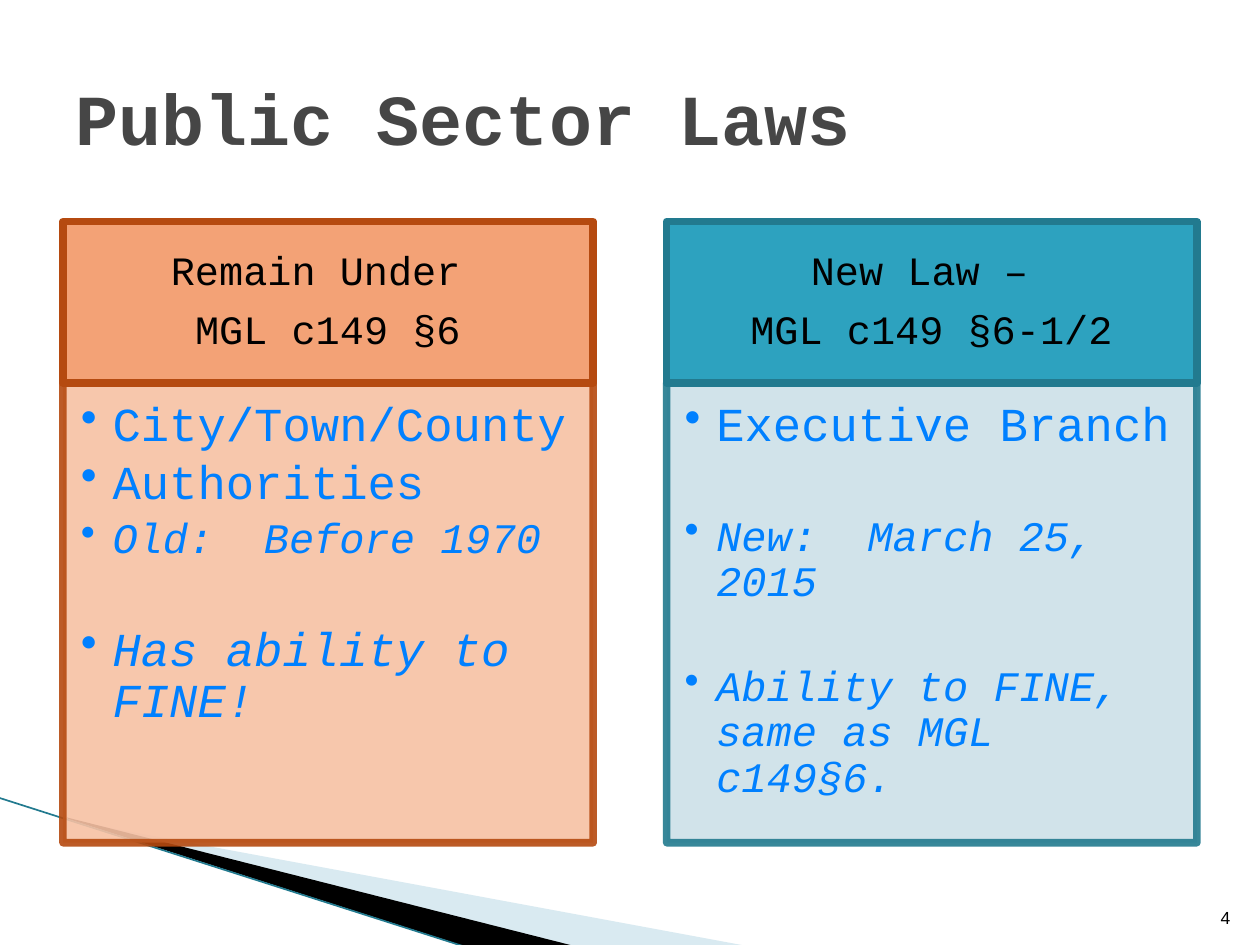
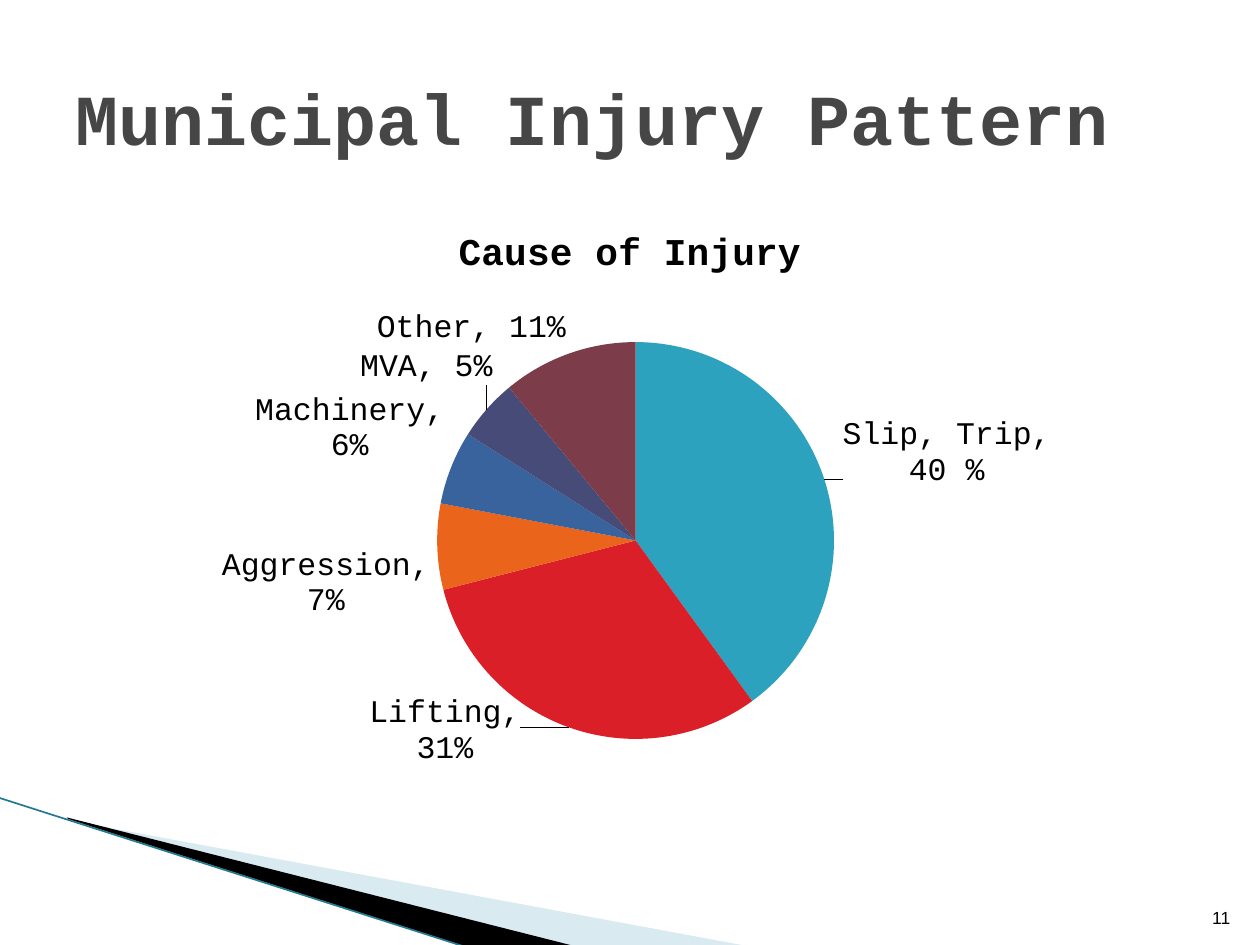
from lxml import etree
from pptx import Presentation
from pptx.chart.data import CategoryChartData
from pptx.dml.color import RGBColor
from pptx.enum.chart import XL_CHART_TYPE as ChartType
from pptx.enum.shapes import MSO_CONNECTOR as Connector, MSO_SHAPE as Shape
from pptx.enum.text import MSO_ANCHOR as Anchor, MSO_AUTO_SIZE as AutoSize, PP_ALIGN as Align
from pptx.oxml import parse_xml
from pptx.oxml.ns import nsdecls, qn
from pptx.util import Cm, Pt

FONT, NUMBER_FONT = "Courier New", "Arial"
BLACK = RGBColor(0x00, 0x00, 0x00)
TITLE_GREY = RGBColor(0x46, 0x46, 0x46)
BULLET_BLUE = RGBColor(0x00, 0x80, 0xFF)
PALE_BLUE = RGBColor(0xA0, 0xCB, 0xDC)
TEAL, TEAL_EDGE = RGBColor(0x2D, 0xA2, 0xBF), RGBColor(0x22, 0x7A, 0x8F)
TEAL_TINT = RGBColor(0xCD, 0xE0, 0xE8)
ORANGE, ORANGE_EDGE = RGBColor(0xF3, 0xA2, 0x76), RGBColor(0xB5, 0x4A, 0x10)
ORANGE_TINT = RGBColor(0xF7, 0xC1, 0xA4)
SLICE_COLOURS = [TEAL, RGBColor(0xDA, 0x1F, 0x28), RGBColor(0xEB, 0x64, 0x1B),
                 RGBColor(0x39, 0x63, 0x9D), RGBColor(0x47, 0x4B, 0x78),
                 RGBColor(0x7D, 0x3C, 0x4A)]

LAWS = [
    (1.27, ["Remain Under ", "MGL c149 §6"], ORANGE, ORANGE_TINT, ORANGE_EDGE,
     [("City/Town/County", 27, False, 0), ("Authorities", 27, False, 0),
      ("Old:  Before 1970", 24, True, 0), ("Has ability to FINE!", 27, True, 32)]),
    (13.44, ["New Law – ", "MGL c149 §6-1/2"], TEAL, TEAL_TINT, TEAL_EDGE,
     [("Executive Branch", 27, False, 0), ("New:  March 25, 2015", 24, True, 32),
      ("Ability to FINE, same as MGL c149§6.", 24, True, 30)]),
]
CAUSES = [("Slip, Trip", 40, 0.01, 0.02), ("Lifting", 31, -0.04, -0.06),
          ("Aggression", 7, 0, 0.06), ("Machinery", 6, 0, 0),
          ("MVA", 5, 0.01, -0.03), ("Other", 11, 0, 0)]


def style_font(font, size, colour=BLACK, name=FONT, bold=False, italic=False):
    """Apply one character format."""
    font.size, font.name, font.bold, font.italic = Pt(size), name, bold, italic
    font.color.rgb = colour


def write(paragraph, text, *, size, align=Align.LEFT, before=0, after=0,
          spacing=1.0, bullet=False, **style):
    """Fill a paragraph with formatted text."""
    if bullet:
        props = paragraph._p.get_or_add_pPr()
        props.set("marL", str(Cm(0.64)))
        props.set("indent", str(-Cm(0.64)))
        etree.SubElement(props, qn("a:buChar")).set("char", "•")
    paragraph.alignment, paragraph.line_spacing = align, spacing
    paragraph.space_before, paragraph.space_after = Pt(before), Pt(after)
    run = paragraph.add_run()
    run.text = text
    style_font(run.font, size, **style)


def paragraphs(frame, count):
    """Return the first paragraph and enough new ones to make the count."""
    return [frame.paragraphs[0]] + [frame.add_paragraph() for _ in range(count - 1)]


def set_alpha(fill_parent, percent):
    """Make the solid fill of an element partly transparent."""
    colour = fill_parent.find(qn("a:solidFill"))[0]
    etree.SubElement(colour, qn("a:alpha")).set("val", str(percent * 1000))


def add_panel(slide, box, fill, edge, alpha, anchor, insets):
    """Add an outlined rectangle and return its text frame."""
    panel = slide.shapes.add_shape(Shape.RECTANGLE, *map(Cm, box))
    panel.shadow.inherit = False
    panel.fill.solid()
    panel.fill.fore_color.rgb = fill
    panel.line.color.rgb, panel.line.width = edge, Pt(4.33)
    outline = panel.line._get_or_add_ln()
    etree.SubElement(outline, qn("a:round"))
    if alpha < 100:
        set_alpha(panel._element.spPr, alpha)
        set_alpha(outline, alpha)
    frame = panel.text_frame
    frame.word_wrap, frame.vertical_anchor = True, anchor
    (frame.margin_left, frame.margin_top,
     frame.margin_right, frame.margin_bottom) = map(Cm, insets)
    return frame


def add_wedge(slide, points, colour, alpha=100):
    """Add a filled corner wedge through points in centimetres."""
    start, *rest = [(Cm(x), Cm(y)) for x, y in points]
    builder = slide.shapes.build_freeform(*start)
    builder.add_line_segments(rest, close=True)
    wedge = builder.convert_to_shape()
    wedge.shadow.inherit = False
    wedge.fill.solid()
    wedge.fill.fore_color.rgb = colour
    wedge.line.fill.background()
    if alpha < 100:
        set_alpha(wedge._element.spPr, alpha)


def add_swoosh(slide):
    """Add the corner decoration."""
    add_wedge(slide, [(1.4, 16.54), (15.11, 19.08), (11.58, 19.08), (1.4, 16.51)],
              PALE_BLUE, 40)
    add_wedge(slide, [(1.35, 16.48), (11.61, 19.08), (9.45, 19.1), (1.37, 16.51)], BLACK)
    edge = slide.shapes.add_connector(Connector.STRAIGHT, Cm(-0.03), Cm(16.08),
                                      Cm(9.42), Cm(19.1))
    edge.line.color.rgb, edge.line.width = TEAL_EDGE, Pt(0.95)
    etree.SubElement(edge._element.spPr, qn("a:effectLst"))


def add_base_slide(deck, heading, number):
    """Add a slide with the shared decoration, title and number."""
    slide = deck.slides.add_slide(deck.slide_layouts[5])
    add_swoosh(slide)
    title = slide.shapes.title
    title.left, title.top, title.width, title.height = map(Cm, (1.27, 0.76, 22.86, 3.18))
    frame = title.text_frame
    frame.word_wrap, frame.auto_size = True, AutoSize.NONE
    frame.vertical_anchor = Anchor.MIDDLE
    write(frame.paragraphs[0], heading, size=41, colour=TITLE_GREY, bold=True)
    corner = slide.shapes.add_textbox(*map(Cm, (24.03, 17.81, 1.02, 1.02))).text_frame
    corner.vertical_anchor = Anchor.BOTTOM
    corner.word_wrap = True
    write(corner.paragraphs[0], str(number), size=10, align=Align.RIGHT, name=NUMBER_FONT)
    return slide


def add_law_column(slide, box, heading, fill, tint, edge, points):
    """Add a heading panel with a bulleted panel below it."""
    left, top, width, height = box
    head_height = 3.25
    body = add_panel(slide, (left, top + head_height, width, height - head_height),
                     tint, edge, 90, Anchor.TOP, (0.36, 0.36, 0.48, 0.53))
    for paragraph, (text, size, italic, before) in zip(paragraphs(body, len(points)), points):
        write(paragraph, text, size=size, italic=italic, before=before, after=4,
              spacing=0.9, bullet=True, colour=BULLET_BLUE)
    head = add_panel(slide, (left, top, width, head_height),
                     fill, edge, 100, Anchor.MIDDLE, (0.46, 0.25, 0.46, 0.25))
    for paragraph, text in zip(paragraphs(head, len(heading)), heading):
        write(paragraph, text, size=23, align=Align.CENTER, after=9, spacing=0.9)


def manual_layout(x, y, extra=""):
    """Return chart layout XML for a place given in fractions."""
    return (f'<c:layout {nsdecls("c")}><c:manualLayout>{extra}'
            f'<c:x val="{x}"/><c:y val="{y}"/></c:manualLayout></c:layout>')


def slice_label(index, x, y):
    """Return a label element showing cause and share, moved by an offset."""
    return parse_xml(
        f'<c:dLbl {nsdecls("c", "a")}><c:idx val="{index}"/>{manual_layout(x, y)}'
        '<c:numFmt formatCode="0&quot;%&quot;" sourceLinked="0"/><c:spPr><a:noFill/></c:spPr>'
        '<c:txPr><a:bodyPr wrap="square"/><a:p><a:pPr><a:defRPr sz="1800">'
        f'<a:latin typeface="{FONT}"/></a:defRPr></a:pPr></a:p></c:txPr>'
        '<c:dLblPos val="outEnd"/><c:showLegendKey val="0"/><c:showVal val="1"/>'
        '<c:showCatName val="1"/><c:showSerName val="0"/><c:showPercent val="0"/>'
        '<c:showBubbleSize val="0"/><c:separator>, </c:separator></c:dLbl>')


def add_injury_pie(slide, box):
    """Add the pie of injury causes."""
    data = CategoryChartData()
    data.categories = [cause for cause, *_ in CAUSES]
    data.add_series("Cause of Injury", [share for _, share, *_ in CAUSES])
    chart = slide.shapes.add_chart(ChartType.PIE, *map(Cm, box), data).chart
    style_font(chart.font, 18)
    chart.has_legend = False
    chart.has_title = True
    write(chart.chart_title.text_frame.paragraphs[0], "Cause of Injury",
          size=21.6, align=Align.CENTER, bold=True)

    plot = chart.plots[0]
    plot.vary_by_categories = True
    area = plot._element.getparent()
    for old in area.findall(qn("c:layout")):
        area.remove(old)
    layout = parse_xml(manual_layout(0.33, 0.22, '<c:layoutTarget val="inner"/>'
                                     '<c:xMode val="edge"/><c:yMode val="edge"/>'))
    for tag, size in (("c:w", 0.35), ("c:h", 0.64)):
        etree.SubElement(layout[0], qn(tag)).set("val", str(size))
    area.insert(0, layout)

    series = plot.series[0]
    labels = series.data_labels
    labels.show_value = labels.show_category_name = True
    for index, (colour, (_, _, x, y)) in enumerate(zip(SLICE_COLOURS, CAUSES)):
        fill = series.points[index].format.fill
        fill.solid()
        fill.fore_color.rgb = colour
        labels._element.insert(index, slice_label(index, x, y))
    frame = series.points[0].data_label.text_frame
    for paragraph, text in zip(paragraphs(frame, 2), ("Slip, Trip, ", "40 %")):
        write(paragraph, text, size=18, align=Align.CENTER)


def main():
    """Build and save the deck."""
    deck = Presentation()
    deck.slide_width, deck.slide_height = Cm(25.4), Cm(19.05)
    laws = add_base_slide(deck, "Public Sector Laws", 4)
    for left, *column in LAWS:
        add_law_column(laws, (left, 4.47, 10.69, 12.52), *column)
    injuries = add_base_slide(deck, "Municipal Injury Pattern", 11)
    add_injury_pie(injuries, (1.27, 4.11, 22.86, 12.57))
    deck.save("out.pptx")


if __name__ == "__main__":
    main()
